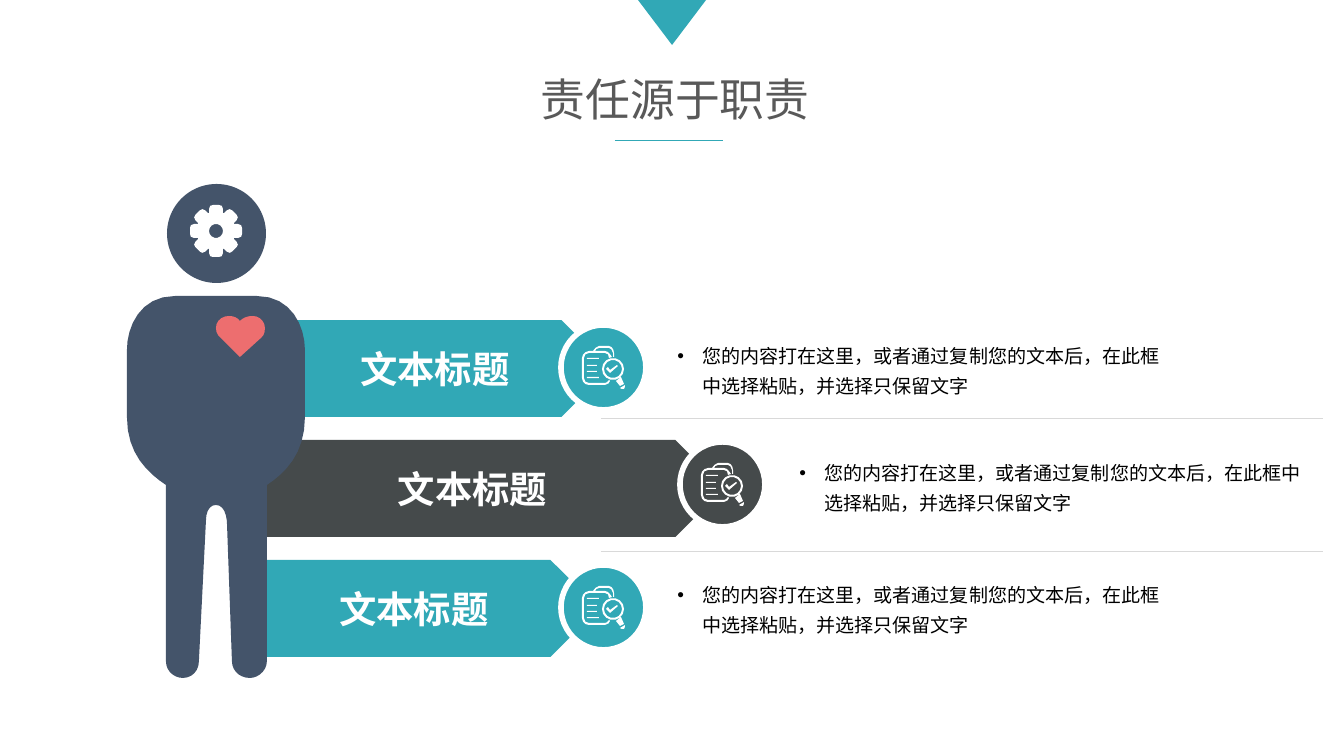
"""Build a slide with a standing figure, three labelled banners and their lists."""
import math

from lxml import etree
from pptx import Presentation
from pptx import util as u
from pptx.dml.color import RGBColor
from pptx.enum import shapes, text
from pptx.oxml.ns import qn

EMU_PER_PX = 914400 / 134.4
TEAL = RGBColor(0x31, 0xA8, 0xB6)
CHARCOAL = RGBColor(0x45, 0x4A, 0x4B)
NAVY = RGBColor(0x44, 0x54, 0x6A)
CORAL = RGBColor(0xED, 0x6E, 0x6F)
GRAY = RGBColor(0x59, 0x59, 0x59)
LIGHT_GRAY = RGBColor(0xD9, 0xD9, 0xD9)
WHITE = RGBColor(0xFF, 0xFF, 0xFF)
BLACK = RGBColor(0, 0, 0)

TITLE = "责任源于职责"
LABEL = "文本标题"
CONTENT = "您的内容打在这里，或者通过复制您的文本后，在此框中选择粘贴，并选择只保留文字"
BANNER_LEFT, BANNER_TOP, BANNER_PITCH, BANNER_HEIGHT = 255, 320, 120, 97
BADGE_SIZE, ICON_INSET = 85, 21

BANNERS = [
    (TEAL, 355, (306, 258), (561, 325), (664, 331, 512, 74)),
    (CHARCOAL, 469, (265, 415), (680, 442), (786, 448, 536, 74)),
    (TEAL, 344, (265, 298), (561, 565), (664, 570, 512, 74)),
]

TORSO = [
    (257, 296), (175, 296), (140, 296, 127, 327, 127, 350), (127, 417),
    (127, 454, 148, 473, 166, 485), (166, 661), (166, 671, 174, 678, 183, 678),
    (192, 678, 199, 671, 199, 661), (206, 521), (206, 511, 210, 505, 216, 505),
    (222, 505, 226, 511, 227, 521), (232, 661), (232, 671, 240, 678, 250, 678),
    (258, 678, 267, 671, 267, 661), (267, 485), (285, 473, 305, 454, 305, 417),
    (305, 350), (305, 327, 292, 296, 257, 296),
]
HEART = [
    (253, 316), (247, 316, 243, 318, 240, 321), (238, 318, 234, 316, 229, 316),
    (222, 316, 216, 321, 216, 328), (216, 332, 218, 336, 221, 338), (240, 357),
    (261, 338), (264, 336, 265, 332, 265, 328), (265, 321, 259, 316, 253, 316),
]
TOOTH = [
    (-7, -18), (-7, -22), (-7, -25, -5, -26, -3, -26),
    (3, -26), (5, -26, 7, -25, 7, -22), (7, -18),
]
CLIPBOARD = [
    (27, 34), (28, 35), (28, 36, 26, 39, 23, 39), (7, 39), (3, 39, 0, 36, 0, 32),
    (0, 12), (0, 9, 3, 5, 7, 5), (11, 5), (12, 3, 15, 0, 17, 0), (27, 0),
    (30, 0, 32, 4, 32, 7), (32, 11), (31, 11), (31, 7), (31, 4, 28, 2, 27, 2),
    (17, 2), (15, 2, 13, 4, 13, 5), (23, 5), (26, 5, 28, 8, 30, 11), (27, 12),
    (27, 9, 26, 7, 23, 7), (7, 7), (4, 7, 2, 9, 2, 12), (2, 32),
    (2, 35, 4, 37, 7, 37), (23, 37), (24, 37, 26, 36, 27, 34),
]
HANDLE = [(39, 31), (34, 35), (38, 40), (42, 38)]
HANDLE_TIP = [(43, 39), (38, 42), (39, 43, 40, 43, 42, 43), (43, 42, 43, 40, 43, 39)]
CHECK = [(28, 24), (26, 21), (24, 23), (28, 27), (36, 20), (35, 19)]
LIST_LINES = [(12, 17), (19, 15), (25, 15), (31, 17)]


def px(length):
    return u.Emu(round(length * EMU_PER_PX))


def flatten(outline):
    points = []
    for segment in outline:
        if len(segment) == 2:
            points.append(segment)
            continue
        controls = [points[-1], segment[:2], segment[2:4], segment[4:]]
        steps = min(8, math.ceil(math.dist(controls[0], controls[3]) / 4))
        for step in range(1, steps + 1):
            t = step / steps
            weights = ((1 - t) ** 3, 3 * t * (1 - t) ** 2, 3 * t * t * (1 - t), t ** 3)
            points.append(tuple(
                sum(weight * point[axis] for weight, point in zip(weights, controls))
                for axis in (0, 1)))
    return points


def rotate(points, angle):
    cosine, sine = math.cos(angle), math.sin(angle)
    return [(x * cosine - y * sine, x * sine + y * cosine) for x, y in points]


def circle(x, y, radius, sides=14):
    return [(x + dx, y + dy) for turn in range(sides)
            for dx, dy in rotate([(radius, 0)], turn * math.tau / sides)]


def gear():
    tooth = flatten(TOOTH)
    rim = [point for turn in range(8) for point in rotate(tooth, turn * math.tau / 8)]
    return [rim, circle(0, 0, 7)]


def clipboard_icon():
    lines = [[(5, y), (right, y), (right, y + 1), (5, y + 1)] for y, right in LIST_LINES]
    parts = [flatten(part) for part in (CLIPBOARD, HANDLE, HANDLE_TIP, CHECK)]
    return parts + lines + [circle(31, 23, 11), circle(31, 23, 9)]


def paint(shape, fill):
    shape.shadow.inherit = False
    shape.fill.solid()
    shape.fill.fore_color.rgb = fill
    shape.line.fill.background()
    return shape


def add_preset(container, kind, box, fill):
    return paint(container.add_shape(kind, *map(px, box)), fill)


def add_outline(container, contours, fill, left=0, top=0):
    builder = None
    for contour in contours:
        points = [(px(x), px(y)) for x, y in contour]
        if builder is None:
            builder = container.build_freeform(*points[0], scale=1.0)
        else:
            builder.move_to(*points[0])
        builder.add_line_segments(points[1:], close=True)
    return paint(builder.convert_to_shape(px(left), px(top)), fill)


def add_rule(slide, left, right, y, color, width):
    rule = slide.shapes.add_connector(
        shapes.MSO_CONNECTOR.STRAIGHT, px(left), px(y), px(right), px(y))
    rule.line.color.rgb = color
    rule.line.width = u.Pt(width)
    etree.SubElement(rule._element.spPr, qn("a:effectLst"))


def add_bullet(paragraph):
    properties = paragraph._p.get_or_add_pPr()
    properties.set("marL", str(px(25)))
    properties.set("indent", str(-px(25)))
    etree.SubElement(properties, qn("a:buFont"), typeface="Arial")
    etree.SubElement(properties, qn("a:buChar"), char="•")
    tabs = etree.SubElement(properties, qn("a:tabLst"))
    etree.SubElement(tabs, qn("a:tab"), pos=str(px(34)), algn="l")


def write(shape, words, size, color, font, bold=False, bullet=False,
          anchor=text.MSO_ANCHOR.MIDDLE):
    frame = shape.text_frame
    frame.text = words
    frame.word_wrap = bullet
    frame.auto_size = text.MSO_AUTO_SIZE.NONE
    frame.vertical_anchor = anchor
    paragraph = frame.paragraphs[0]
    if bullet:
        add_bullet(paragraph)
    paragraph.alignment = text.PP_ALIGN.LEFT if bullet else text.PP_ALIGN.CENTER
    paragraph.line_spacing = 1.3 if bullet else 1.0
    paragraph.space_before = u.Pt(0)
    paragraph.font.name = font
    paragraph.font.size = u.Pt(size)
    paragraph.font.bold = bold
    paragraph.font.color.rgb = color


def move(shape, box):
    shape.left, shape.top, shape.width, shape.height = map(px, box)


def add_banner(slide, top, color, width, label, badge):
    group = slide.shapes.add_group_shape().shapes
    add_preset(group, shapes.MSO_SHAPE.PENTAGON,
               (BANNER_LEFT, top, width, BANNER_HEIGHT), color)
    disc = add_preset(group, shapes.MSO_SHAPE.OVAL, (*badge, BADGE_SIZE, BADGE_SIZE), color)
    disc.line.color.rgb = WHITE
    disc.line.width = u.Pt(3)
    add_outline(group, clipboard_icon(), WHITE, *(edge + ICON_INSET for edge in badge))
    left, label_width = label
    label_box = group.add_textbox(*map(px, (left, top, label_width, BANNER_HEIGHT)))
    write(label_box, LABEL, 20, WHITE, "Calibri", bold=True)


def add_figure(slide):
    add_preset(slide.shapes, shapes.MSO_SHAPE.OVAL, (167, 184, 99, 99), NAVY)
    add_outline(slide.shapes, [flatten(TORSO)], NAVY)
    add_outline(slide.shapes, [flatten(HEART)], CORAL)
    add_outline(slide.shapes, gear(), WHITE, 216, 231)


def main():
    presentation = Presentation()
    presentation.slide_width, presentation.slide_height = px(1344), px(756)
    slide = presentation.slides.add_slide(presentation.slide_layouts.get_by_name("Comparison"))
    title, *lists, spare = slide.placeholders
    spare._element.getparent().remove(spare._element)

    move(title, (526, 65, 298, 67))
    write(title, TITLE, 24, GRAY, "Noto Sans CJK SC", anchor=text.MSO_ANCHOR.TOP)
    for row, (banner, placeholder) in enumerate(zip(BANNERS, lists)):
        *style, list_box = banner
        add_banner(slide, BANNER_TOP + row * BANNER_PITCH, *style)
        move(placeholder, list_box)
        write(placeholder, CONTENT, 10.2, BLACK, "Calibri", bullet=True,
              anchor=text.MSO_ANCHOR.TOP)
    add_figure(slide)

    for y in (418, 551):
        add_rule(slide, 601, 1323, y, LIGHT_GRAY, 0.25)
    add_rule(slide, 615, 723, 141, TEAL, 0.5)
    pointer = add_preset(slide.shapes, shapes.MSO_SHAPE.ISOSCELES_TRIANGLE,
                         (638, 0, 68, 45), TEAL)
    pointer.rotation = 180
    presentation.save("out.pptx")


if __name__ == "__main__":
    main()
